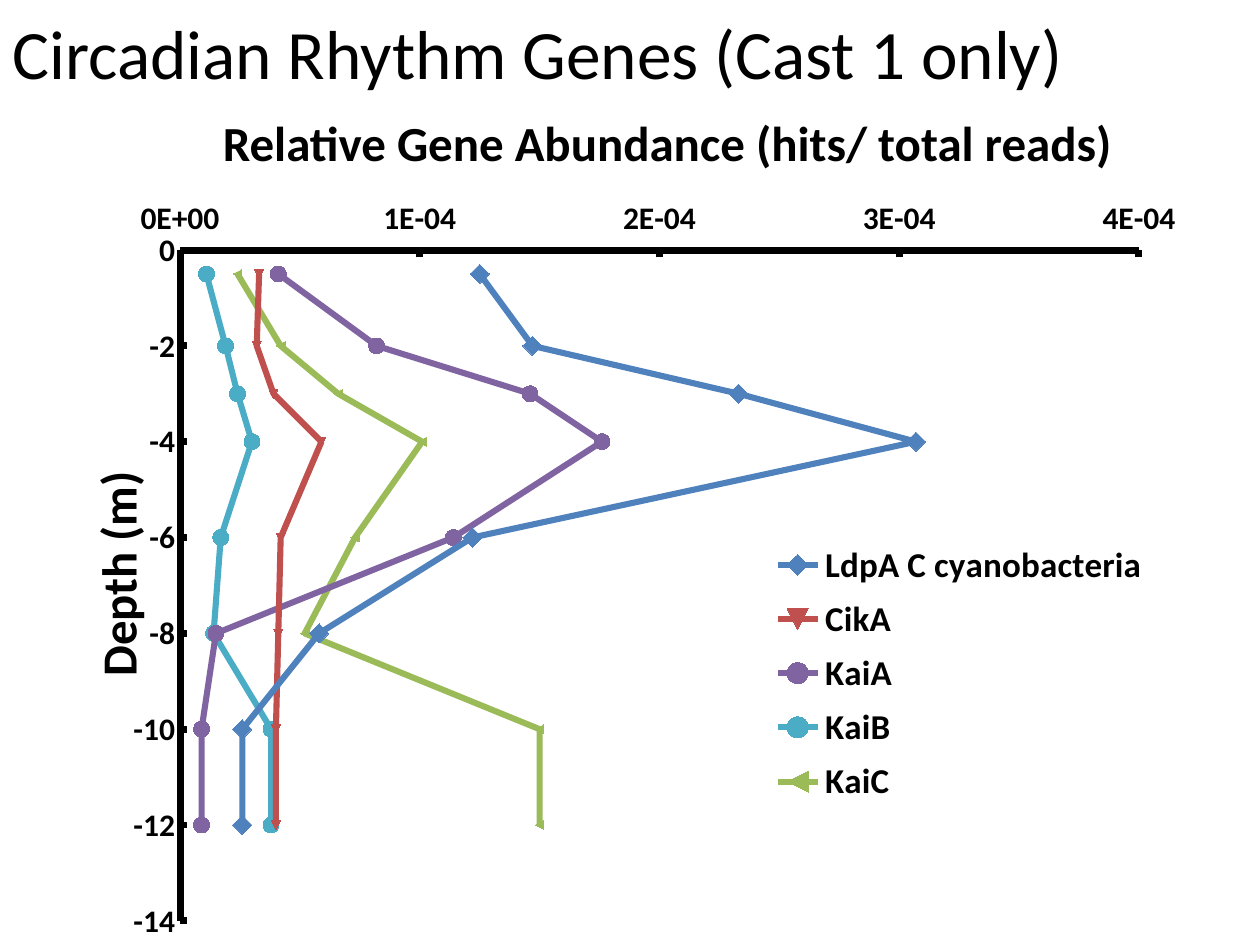
"""Build the circadian rhythm gene depth profile slide."""
from dataclasses import dataclass

from lxml.etree import SubElement
from pptx import Presentation
from pptx.chart.data import XyChartData
from pptx.dml.color import RGBColor
from pptx.enum.chart import (XL_CHART_TYPE, XL_LEGEND_POSITION, XL_MARKER_STYLE,
                             XL_TICK_LABEL_POSITION, XL_TICK_MARK)
from pptx.enum.text import MSO_ANCHOR, MSO_AUTO_SIZE, PP_ALIGN
from pptx.oxml.ns import qn
from pptx.util import Inches, Pt

DEPTHS = [-0.5, -2, -3, -4, -6, -8, -10, -12]
UNIT = 1e-6
GENES = [
    ("LdpA C cyanobacteria", "4F81BD", (XL_MARKER_STYLE.DIAMOND, 11),
     [125, 147, 233, 307, 122, 58, 26, 26]),
    ("CikA", "C0504D", None, [33, 32, 39, 59, 42, 41, 40, 40]),
    ("KaiA", "8064A2", (XL_MARKER_STYLE.CIRCLE, 9),
     [41, 82, 146, 176, 114, 15, 9, 9]),
    ("KaiB", "4BACC6", (XL_MARKER_STYLE.CIRCLE, 9),
     [11, 19, 24, 30, 17, 14, 38, 38]),
    ("KaiC", "9BBB59", None, [24, 42, 66, 101, 73, 52, 150, 150]),
]


@dataclass
class Theme:
    font: str = "Calibri"
    ink: str = "000000"
    title: float = 39.6
    heading: float = 28
    legend: float = 20
    tick: float = 18
    axis_line: float = 4
    series_line: float = 3.5


class Deck:
    def __init__(self, theme):
        self.theme = theme
        self.prs = Presentation()
        self.prs.slide_width, self.prs.slide_height = Inches(10), Inches(7.5)
        self.s = self.prs.slides.add_slide(self.prs.slide_layouts[5])

    def style(self, font, size, bold=False):
        font.name, font.size, font.bold = self.theme.font, Pt(size), bold
        font.color.rgb = RGBColor.from_string(self.theme.ink)

    def title(self, text, x, y, w, h):
        sp = self.s.shapes.title
        sp.left, sp.top, sp.width, sp.height = map(Inches, (x, y, w, h))
        tf = sp.text_frame
        tf.text = text
        tf.auto_size, tf.vertical_anchor = MSO_AUTO_SIZE.NONE, MSO_ANCHOR.MIDDLE
        p = tf.paragraphs[0]
        p.alignment = PP_ALIGN.LEFT
        self.style(p.runs[0].font, self.theme.title)

    def heading(self, text, x, y, w, h):
        tf = self.s.shapes.add_textbox(*map(Inches, (x, y, w, h))).text_frame
        tf.text = text
        tf.word_wrap, tf.auto_size = False, MSO_AUTO_SIZE.SHAPE_TO_FIT_TEXT
        self.style(tf.paragraphs[0].runs[0].font, self.theme.heading, True)

    def layout(self, parent, after, inner=False, **place):
        for old in parent.findall(qn("c:layout")):
            parent.remove(old)
        box = SubElement(parent, qn("c:layout"))
        manual = SubElement(box, qn("c:manualLayout"))
        if inner:
            SubElement(manual, qn("c:layoutTarget"), val="inner")
        for key in "xy":
            SubElement(manual, qn(f"c:{key}Mode"), val="edge")
        for key, value in place.items():
            SubElement(manual, qn(f"c:{key}"), val=str(value))
        if after is None:
            parent.insert(0, box)
        else:
            after.addnext(box)

    def axis(self, axis, low, high, step, fmt, tick, label):
        axis.minimum_scale, axis.maximum_scale, axis.major_unit = low, high, step
        axis.has_major_gridlines = False
        axis.major_tick_mark, axis.minor_tick_mark = tick, XL_TICK_MARK.NONE
        axis.tick_label_position = label
        axis.tick_labels.number_format = fmt
        axis.tick_labels.number_format_is_linked = False
        self.style(axis.tick_labels.font, self.theme.tick, True)
        axis.format.line.color.rgb = RGBColor.from_string(self.theme.ink)
        axis.format.line.width = Pt(self.theme.axis_line)

    def series(self, ser, color, marker, idx):
        rgb = RGBColor.from_string(color)
        ser.smooth = False
        ser.format.line.color.rgb = rgb
        ser.format.line.width = Pt(self.theme.series_line)
        ser._element.find(qn("c:idx")).set("val", str(idx))
        if marker:
            ser.marker.style, ser.marker.size = marker
        ser.marker.format.fill.solid()
        ser.marker.format.fill.fore_color.rgb = rgb
        ser.marker.format.line.color.rgb = rgb

    def depth_chart(self, genes, x, y, w, h):
        data = XyChartData()
        for name, _, _, hits in genes:
            ser = data.add_series(name)
            for hit, depth in zip(hits, DEPTHS):
                ser.add_data_point(round(hit * UNIT, 6), depth)
        chart = self.s.shapes.add_chart(XL_CHART_TYPE.XY_SCATTER_LINES,
                                        *map(Inches, (x, y, w, h)), data).chart
        chart.has_title = False
        self.style(chart.font, 10)
        plot = chart.plots[0]
        plot.vary_by_categories = False
        for idx, (ser, gene) in enumerate(zip(plot.series, genes), 1):
            self.series(ser, gene[1], gene[2], idx)
        self.axis(chart.category_axis, 0, 4e-4, 1e-4, "0E+00",
                  XL_TICK_MARK.OUTSIDE, XL_TICK_LABEL_POSITION.HIGH)
        self.axis(chart.value_axis, -14, 0, 2, "General",
                  XL_TICK_MARK.INSIDE, XL_TICK_LABEL_POSITION.NEXT_TO_AXIS)
        title = chart.value_axis.axis_title
        title.text_frame.text = "Depth (m)"
        self.style(title.text_frame.paragraphs[0].runs[0].font,
                   self.theme.heading, True)
        title.text_frame._txBody.bodyPr.set("rot", "-5400000")
        title.text_frame._txBody.bodyPr.set("vert", "horz")
        self.layout(title._element, title._element.find(qn("c:tx")),
                    x=0.02, y=0.38)
        chart.has_legend = True
        legend = chart.legend
        legend.position = XL_LEGEND_POSITION.RIGHT
        legend.include_in_layout = False
        self.style(legend.font, self.theme.legend, True)
        self.layout(legend._element, legend._element.find(qn("c:legendPos")),
                    x=0.62, y=0.47, w=0.33, h=0.37)
        self.layout(chart._chartSpace.chart.plotArea, None, inner=True,
                    x=0.11, y=0.1, w=0.83, h=0.88)


def main():
    deck = Deck(Theme())
    deck.title("Circadian Rhythm Genes (Cast 1 only)", 0, 0.06, 9, 0.71)
    deck.depth_chart(GENES, 0.42, 1.38, 9.17, 6.08)
    deck.heading("Relative Gene Abundance (hits/ total reads)",
                 1.67, 0.84, 7.34, 0.57)
    deck.prs.save("out.pptx")


if __name__ == "__main__":
    main()
